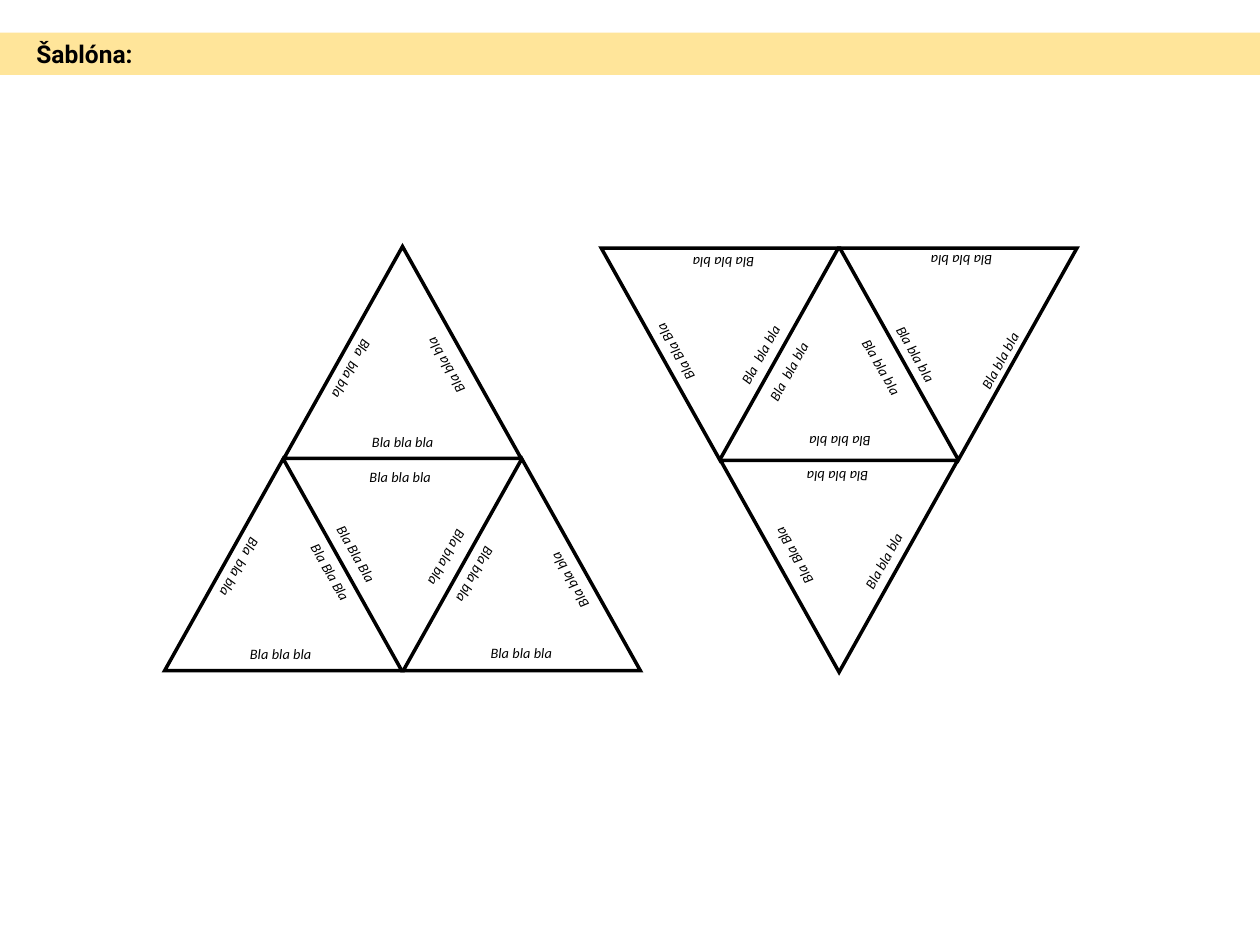
import pptx
import pptx.dml.color
import pptx.enum.shapes
import pptx.enum.text
import pptx.oxml.ns
import pptx.util
from lxml import etree
from pptx.util import Cm

COLOURS = {"ink": "000000", "band": "FFD966"}
SIDE, HEIGHT = 4.78, 4.27
COLUMN_STEP, ROW_STEP = 4.81, 4.28
LABEL_WIDTH, LABEL_HEIGHT = 4.27, 0.61

LOWER, WIDE, CAPITAL = "Bla bla bla", "Bla  bla bla", "Bla Bla Bla"

# (text, rotation, centres in cm)
UPRIGHT_LABELS = [
    (LOWER, 0, [(5.66, 13.18), (10.51, 13.16), (8.12, 8.91), (8.07, 9.61)]),
    (WIDE, 118.9, [(4.83, 11.44), (7.09, 7.44)]),
    (LOWER, 240.2, [(8.98, 7.37), (11.48, 11.7)]),
    (CAPITAL, 60.5, [(7.18, 11.17), (6.66, 11.54)]),
    (LOWER, 118.9, [(9.01, 11.25), (9.58, 11.59)]),
]
INVERTED_LABELS = [
    (LOWER, 180, [(14.58, 5.31), (19.38, 5.26), (16.93, 8.9), (16.88, 9.62)]),
    (WIDE, 298.9, [(15.33, 7.15), (15.9, 7.49)]),
    (LOWER, 60.2, [(17.77, 7.4), (18.46, 7.14)]),
    (CAPITAL, 240.5, [(16.0, 11.2), (13.61, 7.09)]),
    (LOWER, 298.9, [(17.81, 11.31), (20.16, 7.27)]),
]


class SlideBuilder:
    def __init__(self, slide):
        self.slide = slide

    def colour(self, name):
        return pptx.dml.color.RGBColor.from_string(COLOURS[name])

    def format_text(self, frame, text, font_name, size):
        frame.text = text
        frame.word_wrap = True
        frame.auto_size = pptx.enum.text.MSO_AUTO_SIZE.SHAPE_TO_FIT_TEXT
        frame.vertical_anchor = pptx.enum.text.MSO_ANCHOR.TOP
        paragraph = frame.paragraphs[0]
        paragraph.font.name = font_name
        paragraph.font.size = pptx.util.Pt(size)
        paragraph.font.color.rgb = self.colour("ink")
        return paragraph

    def title(self, text, left, top, width, height):
        title = self.slide.shapes.title
        title.left, title.top = Cm(left), Cm(top)
        title.width, title.height = Cm(width), Cm(height)
        paragraph = self.format_text(title.text_frame, text, "Roboto", 14)
        paragraph.alignment = pptx.enum.text.PP_ALIGN.LEFT
        paragraph.font.bold = True

    def band(self, top, width, height, opacity):
        """Add a translucent strip behind the title."""
        band = self.slide.shapes.add_shape(
            pptx.enum.shapes.MSO_SHAPE.RECTANGLE, 0, Cm(top), Cm(width), Cm(height))
        band.shadow.inherit = False
        band.fill.solid()
        band.fill.fore_color.rgb = self.colour("band")
        band.line.fill.background()
        fill_colour = band.element.spPr.find(".//" + pptx.oxml.ns.qn("a:srgbClr"))
        alpha = etree.SubElement(fill_colour, pptx.oxml.ns.qn("a:alpha"))
        alpha.set("val", str(opacity * 1000))
        self.slide.shapes.title.element.addprevious(band.element)

    def triangle_group(self, left, top, inverted=False):
        """Group three triangles: a row of two, and one centred at the tip."""
        group = self.slide.shapes.add_group_shape()
        pair_row, tip_row = (0, 1) if inverted else (1, 0)
        for column, row in [(0.5, tip_row), (0, pair_row), (1, pair_row)]:
            triangle = group.shapes.add_shape(
                pptx.enum.shapes.MSO_SHAPE.ISOSCELES_TRIANGLE,
                Cm(left + column * COLUMN_STEP), Cm(top + row * ROW_STEP),
                Cm(SIDE), Cm(HEIGHT))
            triangle.rotation = 180 if inverted else 0
            triangle.shadow.inherit = False
            triangle.fill.background()
            triangle.line.color.rgb = self.colour("ink")
            triangle.line.width = pptx.util.Pt(2)
            outline = triangle.element.spPr.find(pptx.oxml.ns.qn("a:ln"))
            join = etree.SubElement(outline, pptx.oxml.ns.qn("a:miter"))
            join.set("lim", "800000")

    def label(self, text, rotation, centre_x, centre_y):
        box = self.slide.shapes.add_textbox(
            Cm(centre_x - LABEL_WIDTH / 2), Cm(centre_y - LABEL_HEIGHT / 2),
            Cm(LABEL_WIDTH), Cm(LABEL_HEIGHT))
        box.rotation = rotation
        paragraph = self.format_text(box.text_frame, text, "Calibri", 8.25)
        paragraph.alignment = pptx.enum.text.PP_ALIGN.CENTER
        paragraph.font.italic = True

    def labels(self, rows):
        for text, rotation, centres in rows:
            for centre in centres:
                self.label(text, rotation, *centre)


def main():
    presentation = pptx.Presentation()
    presentation.slide_width, presentation.slide_height = Cm(25.4), Cm(19.05)
    slide = presentation.slides.add_slide(presentation.slide_layouts[5])
    builder = SlideBuilder(slide)
    builder.title("Šablóna:", 0.48, 0.66, 7.67, 0.86)
    builder.band(0.66, 25.4, 0.85, 66)
    builder.triangle_group(3.32, 4.97)
    builder.labels(UPRIGHT_LABELS)
    builder.triangle_group(12.12, 5, inverted=True)
    builder.labels(INVERTED_LABELS)
    presentation.save("out.pptx")


if __name__ == "__main__":
    main()
